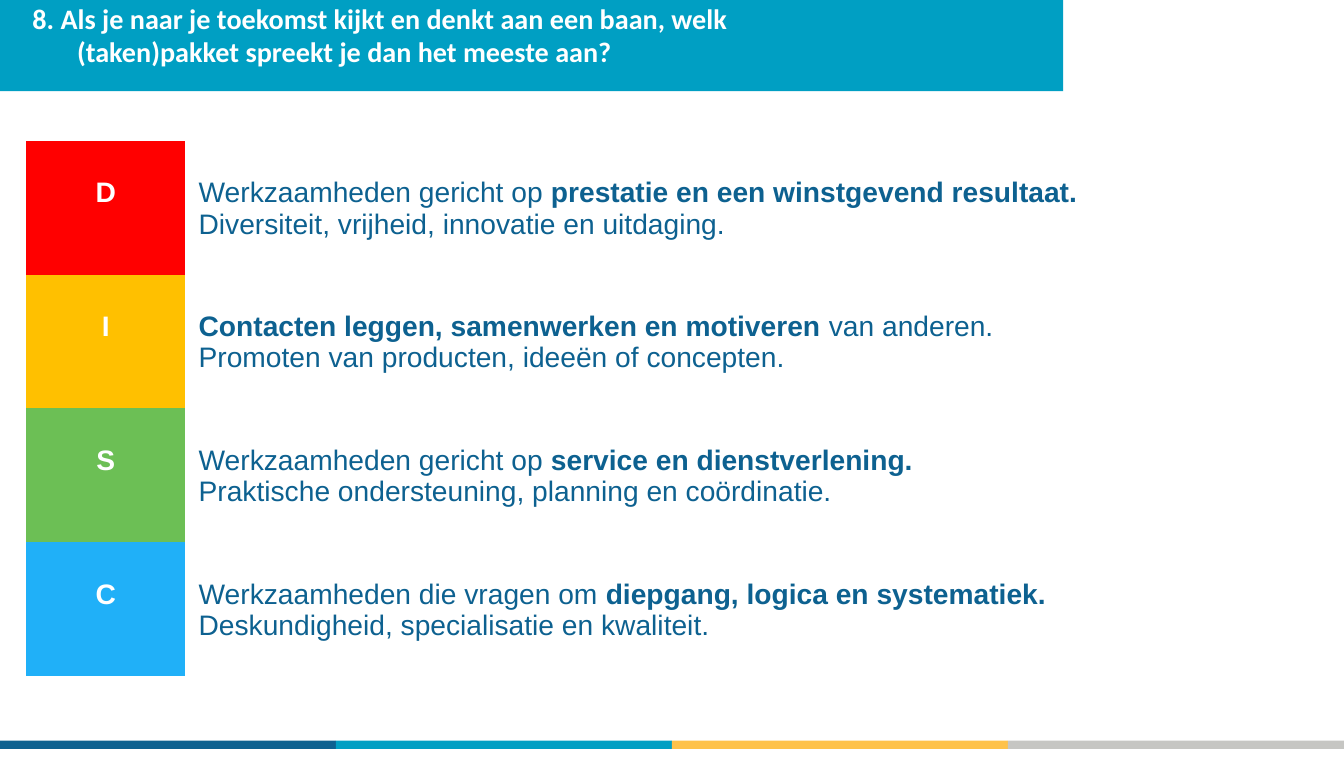
import pptx
import pptx.util
import pptx.dml.color
import pptx.enum.shapes
import pptx.enum.text
import pptx.oxml.ns

Inches = pptx.util.Inches
WIDTH = 13.26
NAVY, TEAL, WHITE = "0D6190", "009FC3", "FFFFFF"
PLAIN_STYLE = "{2D5ABB26-0587-4C30-8999-92F81FD0307C}"
STRIPES = [NAVY, TEAL, "FEC24A", "C6C6C3"]
ROWS = [
    ("D", "FF0000",
     [("Werkzaamheden gericht op ", False),
      ("prestatie en een winstgevend resultaat.", True)],
     "Diversiteit, vrijheid, innovatie en uitdaging."),
    ("I", "FFC000",
     [("Contacten leggen, samenwerken en motiveren ", True),
      ("van anderen.", False)],
     "Promoten van producten, ideeën of concepten."),
    ("S", "6CBF55",
     [("Werkzaamheden gericht op ", False),
      ("service en dienstverlening.", True)],
     "Praktische ondersteuning, planning en coördinatie."),
    ("C", "20B0F8",
     [("Werkzaamheden die vragen om ", False),
      ("diepgang, logica en systematiek.", True)],
     "Deskundigheid, specialisatie en kwaliteit."),
]


def paint(color, value):
    color.rgb = pptx.dml.color.RGBColor.from_string(value)


def style(run, face, value, bold):
    run.font.name = face
    run.font.size = pptx.util.Pt(20)
    run.font.bold = bold
    paint(run.font.color, value)


def add_bar(slide, left, top, width, height, value):
    bar = slide.shapes.add_shape(
        pptx.enum.shapes.MSO_SHAPE.RECTANGLE,
        Inches(left), Inches(top), Inches(width), Inches(height))
    bar.shadow.inherit = False
    bar.fill.solid()
    paint(bar.fill.fore_color, value)
    bar.line.fill.background()


def add_parts(para, parts, value):
    for text, bold in parts:
        run = para.add_run()
        run.text = text
        style(run, "Arial", value, bold)


def pad(cell):
    cell.margin_left = cell.margin_right = Inches(0.13)
    cell.margin_top = Inches(0.36)
    cell.margin_bottom = Inches(0.05)


def add_grid(slide):
    frame = slide.shapes.add_table(
        len(ROWS), 2, Inches(0.26), Inches(1.39), Inches(12.79), Inches(5.28))
    for mark in frame.element.iter(pptx.oxml.ns.qn("a:tableStyleId")):
        mark.text = PLAIN_STYLE
    grid = frame.table
    grid.first_row = grid.horz_banding = False
    grid.columns[0].width = Inches(1.57)
    grid.columns[1].width = Inches(11.22)
    for row, (letter, value, lead, detail) in enumerate(ROWS):
        grid.rows[row].height = Inches(1.32)
        key, tasks = grid.cell(row, 0), grid.cell(row, 1)
        pad(key)
        pad(tasks)
        key.fill.solid()
        paint(key.fill.fore_color, value)
        tasks.fill.background()
        para = key.text_frame.paragraphs[0]
        para.alignment = pptx.enum.text.PP_ALIGN.CENTER
        add_parts(para, [(letter, True)], WHITE)
        add_parts(tasks.text_frame.paragraphs[0], lead, NAVY)
        add_parts(tasks.text_frame.add_paragraph(), [(detail, False)], NAVY)


def set_title(slide):
    title = slide.shapes.title
    title.left, title.top = Inches(0.18), Inches(0.01)
    title.width, title.height = Inches(9.99), Inches(0.81)
    frame = title.text_frame
    frame.text = ("8. Als je naar je toekomst kijkt en denkt aan een baan, welk\v"
                  "(taken)pakket spreekt je dan het meeste aan?")
    frame.auto_size = pptx.enum.text.MSO_AUTO_SIZE.NONE
    frame.vertical_anchor = pptx.enum.text.MSO_ANCHOR.TOP
    frame.margin_top = frame.margin_bottom = 0
    para = frame.paragraphs[0]
    para.alignment = pptx.enum.text.PP_ALIGN.LEFT
    props = para._p.get_or_add_pPr()
    props.set("marL", str(Inches(0.48)))
    props.set("indent", str(Inches(-0.44)))
    for run in para.runs:
        style(run, "Calibri", WHITE, True)
    slide.shapes.element.append(title.element)


def main():
    deck = pptx.Presentation()
    deck.slide_width, deck.slide_height = Inches(WIDTH), Inches(7.5)
    slide = deck.slides.add_slide(deck.slide_layouts[5])
    step = WIDTH / len(STRIPES)
    for index, value in enumerate(STRIPES):
        add_bar(slide, index * step, 7.31, step, 0.08, value)
    add_bar(slide, 0, 0, 10.49, 0.9, TEAL)
    add_grid(slide)
    set_title(slide)
    deck.save("out.pptx")


if __name__ == "__main__":
    main()
